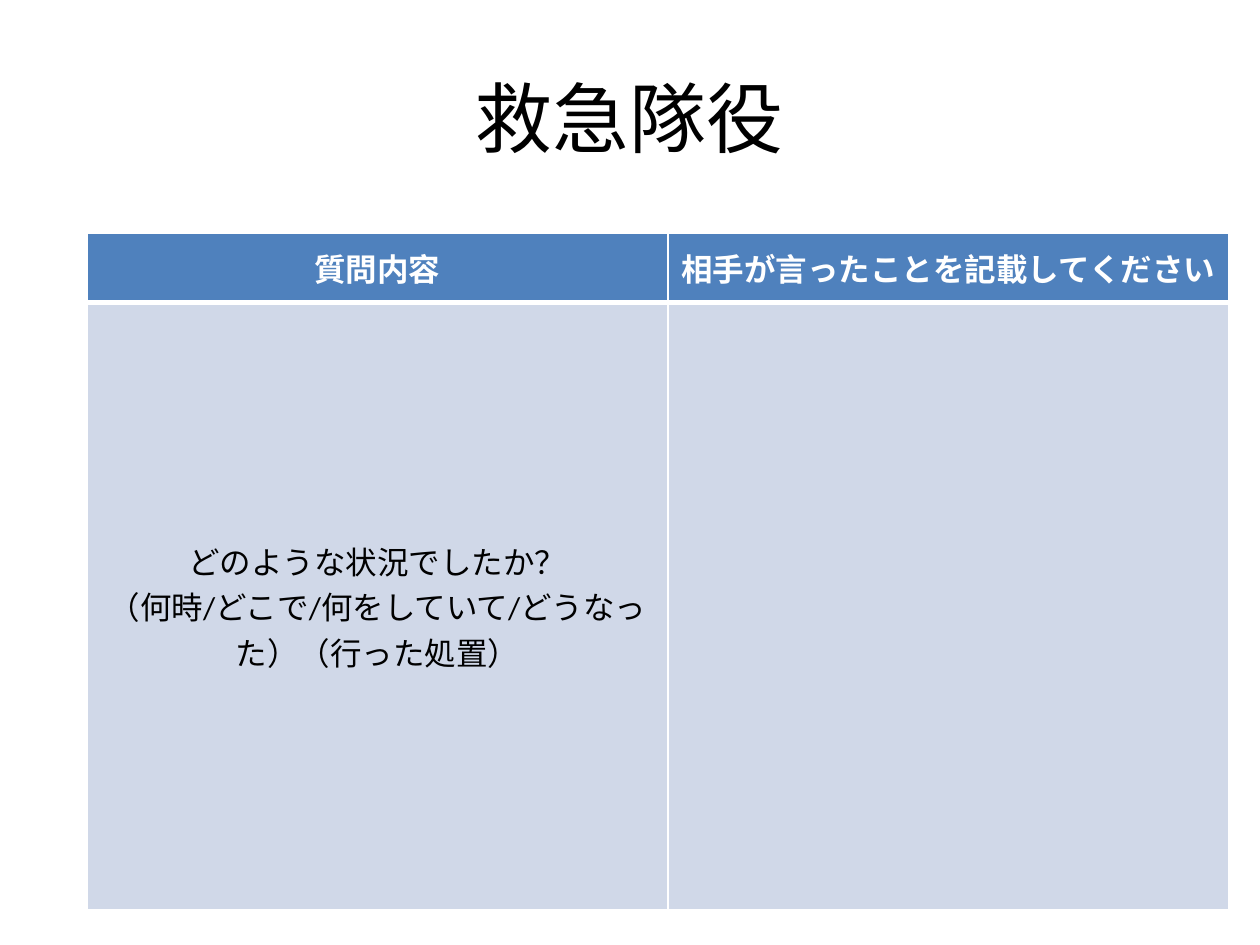
from dataclasses import dataclass

from lxml.etree import SubElement
from pptx import Presentation
from pptx.dml.color import RGBColor
from pptx.enum.text import MSO_ANCHOR as Anchor, PP_ALIGN as Align
from pptx.oxml.ns import qn
from pptx.table import _Cell as Cell
from pptx.text.text import TextFrame
from pptx.util import Pt

FONT = "Calibri"
WHITE, BLACK = "FFFFFF", "000000"
COLUMN_WIDTHS = (332, 320.4)


@dataclass(frozen=True)
class RowStyle:
    height: float
    fill: str
    text: str
    bold: bool
    bottom_line: float


HEADER = RowStyle(39.6, "4F81BD", WHITE, True, 3)
ANSWER = RowStyle(347, "D0D8E8", BLACK, False, 1)

ROWS = (
    (HEADER, (["質問内容"], ["相手が言ったことを記載してください"])),
    (ANSWER, (["どのような状況でしたか？",
               "（何時/どこで/何をしていて/どうなった）（行った処置）"], [])),
)


def color(code: str) -> RGBColor:
    return RGBColor.from_string(code)


def write_centered(frame: TextFrame, lines: list[str], size: float,
                   text_color: str, bold: bool = False) -> None:
    for index, line in enumerate(lines):
        paragraph = frame.add_paragraph() if index else frame.paragraphs[0]
        paragraph.alignment = Align.CENTER
        run = paragraph.add_run()
        run.text = line
        run.font.name = FONT
        run.font.size = Pt(size)
        run.font.bold = bold
        run.font.color.rgb = color(text_color)


def add_border(cell: Cell, side: str, width: float) -> None:
    line = SubElement(cell._tc.get_or_add_tcPr(), qn(f"a:ln{side}"), w=str(Pt(width)))
    fill = SubElement(line, qn("a:solidFill"))
    SubElement(fill, qn("a:srgbClr"), val=WHITE)


def format_cell(cell: Cell, lines: list[str], style: RowStyle, top_line: float) -> None:
    # Borders precede the fill, as the schema requires.
    for side, width in zip("LRTB", (1, 1, top_line, style.bottom_line)):
        add_border(cell, side, width)
    cell.fill.solid()
    cell.fill.fore_color.rgb = color(style.fill)
    cell.vertical_anchor = Anchor.MIDDLE
    cell.margin_left = cell.margin_right = Pt(7)
    write_centered(cell.text_frame, lines, 18, style.text, style.bold)


def main() -> None:
    deck = Presentation()
    deck.slide_width, deck.slide_height = Pt(720), Pt(540)
    slide = deck.slides.add_slide(deck.slide_layouts[5])

    title = slide.shapes.title
    title.left, title.top, title.width, title.height = Pt(36), Pt(21.6), Pt(648), Pt(90)
    title.text_frame.vertical_anchor = Anchor.MIDDLE
    write_centered(title.text_frame, ["救急隊役"], 44, BLACK)

    total_height = sum(style.height for style, _ in ROWS)
    interview = slide.shapes.add_table(
        len(ROWS), len(COLUMN_WIDTHS), Pt(49.7), Pt(133.2),
        Pt(sum(COLUMN_WIDTHS)), Pt(total_height)).table
    for column, width in zip(interview.columns, COLUMN_WIDTHS):
        column.width = Pt(width)

    top_line = 1
    for row, (style, contents) in zip(interview.rows, ROWS):
        row.height = Pt(style.height)
        for cell, lines in zip(row.cells, contents):
            format_cell(cell, lines, style, top_line)
        top_line = style.bottom_line

    deck.save("out.pptx")


if __name__ == "__main__":
    main()
